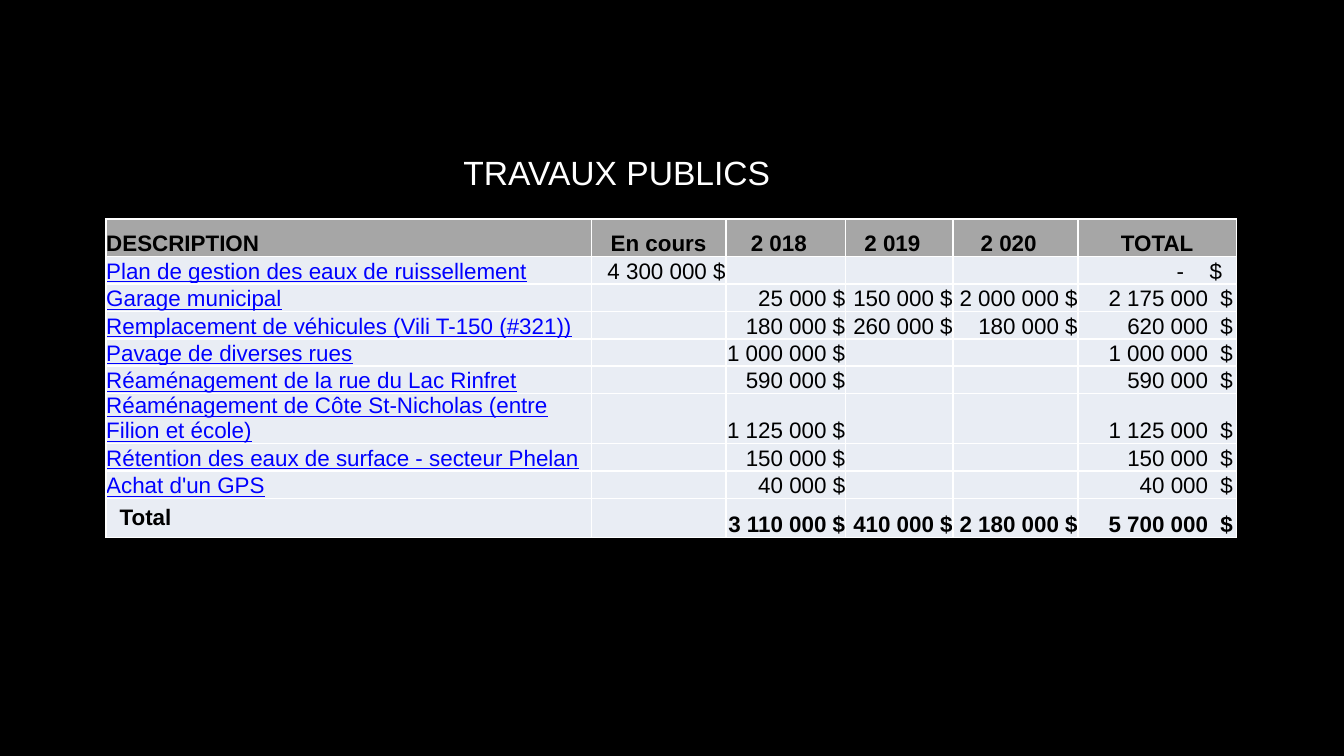
"""Build the public works budget slide with its cost table."""
from dataclasses import dataclass

from lxml import etree
from pptx import Presentation
from pptx.dml.color import RGBColor
from pptx.enum import text as tx
from pptx.oxml import ns
from pptx.util import Inches, Pt

FONT = "Arial"
HUES = {
    "back": "000000",
    "title": "FFFFFF",
    "text": "000000",
    "link": "0000FF",
    "head": "A6A6A6",
    "body": "E9EDF4",
    "edge": "FFFFFF",
}
LEFT, CENTRE, RIGHT = tx.PP_ALIGN.LEFT, tx.PP_ALIGN.CENTER, tx.PP_ALIGN.RIGHT
LOW, TOP = tx.MSO_ANCHOR.BOTTOM, tx.MSO_ANCHOR.TOP
WIDTHS = (3.61, 1, 0.89, 0.8, 0.93, 1.18)
HEADS = ("DESCRIPTION", "En cours", "2 018", "2 019", "2 020", "TOTAL")


@dataclass(frozen=True)
class Style:
    hue: str = "text"
    size: int = 12
    bold: bool = False
    under: bool = False


@dataclass(frozen=True)
class Pad:
    left: float = 0
    right: float = 0
    top: float = 0
    low: float = 0


@dataclass(frozen=True)
class Work:
    name: str
    costs: tuple
    total: str
    high: float = 0.2


WORKS = (
    Work("Plan de gestion des eaux de ruissellement", ("4 300 000", "", "", ""), "-"),
    Work("Garage municipal", ("", "25 000", "150 000", "2 000 000"), "2 175 000"),
    Work("Remplacement de véhicules (Vili T-150 (#321))",
         ("", "180 000", "260 000", "180 000"), "620 000"),
    Work("Pavage de diverses rues", ("", "1 000 000", "", ""), "1 000 000"),
    Work("Réaménagement de la rue du Lac Rinfret", ("", "590 000", "", ""), "590 000"),
    Work("Réaménagement de Côte St-Nicholas (entre Filion et école)",
         ("", "1 125 000", "", ""), "1 125 000", 0.37),
    Work("Rétention des eaux de surface - secteur Phelan",
         ("", "150 000", "", ""), "150 000"),
    Work("Achat d'un GPS", ("", "40 000", "", ""), "40 000"),
)
SUM = Work("Total", ("", "3 110 000", "410 000", "2 180 000"), "5 700 000", 0.29)


def tint(key: str) -> RGBColor:
    return RGBColor.from_string(HUES[key])


def add_run(para, words: str, style: Style) -> None:
    run = para.add_run()
    run.text = words
    font = run.font
    font.name, font.size = FONT, Pt(style.size)
    font.bold, font.underline = style.bold, style.under
    font.color.rgb = tint(style.hue)


def add_edges(cell) -> None:
    props = cell._tc.get_or_add_tcPr()
    for side in ("lnL", "lnR", "lnT", "lnB"):
        line = etree.SubElement(props, ns.qn(f"a:{side}"), w=str(Pt(1)))
        fill = etree.SubElement(line, ns.qn("a:solidFill"))
        etree.SubElement(fill, ns.qn("a:srgbClr"), val=HUES["edge"])


def add_tabs(para, stops: tuple) -> None:
    tabs = etree.SubElement(para._p.get_or_add_pPr(), ns.qn("a:tabLst"))
    for place, kind in zip(stops, ("r", "l")):
        etree.SubElement(tabs, ns.qn("a:tab"), pos=str(Inches(place)), algn=kind)


def fill_cell(cell, words: str, style: Style, fill: str = "body",
              align=LEFT, pad: Pad = Pad(), anchor=LOW):
    add_edges(cell)
    cell.fill.solid()
    cell.fill.fore_color.rgb = tint(fill)
    cell.margin_left, cell.margin_right = Inches(pad.left), Inches(pad.right)
    cell.margin_top, cell.margin_bottom = Inches(pad.top), Inches(pad.low)
    cell.vertical_anchor = anchor
    para = cell.text_frame.paragraphs[0]
    para.alignment = align
    if words:
        add_run(para, words, style)
    else:
        etree.SubElement(para._p, ns.qn("a:endParaRPr"), sz=str(style.size * 100))
    return para


def fill_costs(cells: list, work: Work, style: Style) -> None:
    for cell, cost in zip(cells[1:], work.costs):
        fill_cell(cell, f"{cost} $" if cost else "", style, align=RIGHT)
    para = fill_cell(cells[-1], f"\t{work.total}\t$", style)
    add_tabs(para, (0.79, 0.98) if work.total == "-" else (0.97, 1.06))


def add_budget(slide) -> None:
    highs = [0.28] + [work.high for work in WORKS] + [SUM.high]
    frame = slide.shapes.add_table(
        len(highs), len(WIDTHS), Inches(0.79), Inches(1.63),
        Inches(sum(WIDTHS)), Inches(sum(highs)))
    table = frame.table
    for col, wide in zip(table.columns, WIDTHS):
        col.width = Inches(wide)
    for row, high in zip(table.rows, highs):
        row.height = Inches(high)
    rows = [list(row.cells) for row in table.rows]

    bold = Style(bold=True)
    for cell, head in zip(rows[0], HEADS):
        fill_cell(cell, head, bold, "head",
                  LEFT if head == HEADS[0] else CENTRE,
                  Pad(right=0.1 if head.startswith("2") else 0))
    for cells, work in zip(rows[1:], WORKS):
        fill_cell(cells[0], work.name, Style("link", under=True))
        fill_costs(cells, work, Style())
    fill_cell(rows[-1][0], SUM.name, bold, pad=Pad(0.1, 0.1, 0.05, 0.05), anchor=TOP)
    fill_costs(rows[-1], SUM, bold)


def add_title(slide) -> None:
    box = slide.shapes.add_textbox(Inches(3.35), Inches(1.08), Inches(2.51), Inches(0.4))
    frame = box.text_frame
    frame.word_wrap = False
    frame.auto_size = tx.MSO_AUTO_SIZE.SHAPE_TO_FIT_TEXT
    add_run(frame.paragraphs[0], "TRAVAUX PUBLICS", Style("title", 18))


def main() -> None:
    deck = Presentation()
    deck.slide_width = Inches(10)
    deck.slide_height = deck.slide_width * 9 // 16
    slide = deck.slides.add_slide(deck.slide_layouts[6])
    slide.background.fill.solid()
    slide.background.fill.fore_color.rgb = tint("back")
    add_budget(slide)
    add_title(slide)
    deck.save("out.pptx")


if __name__ == "__main__":
    main()
